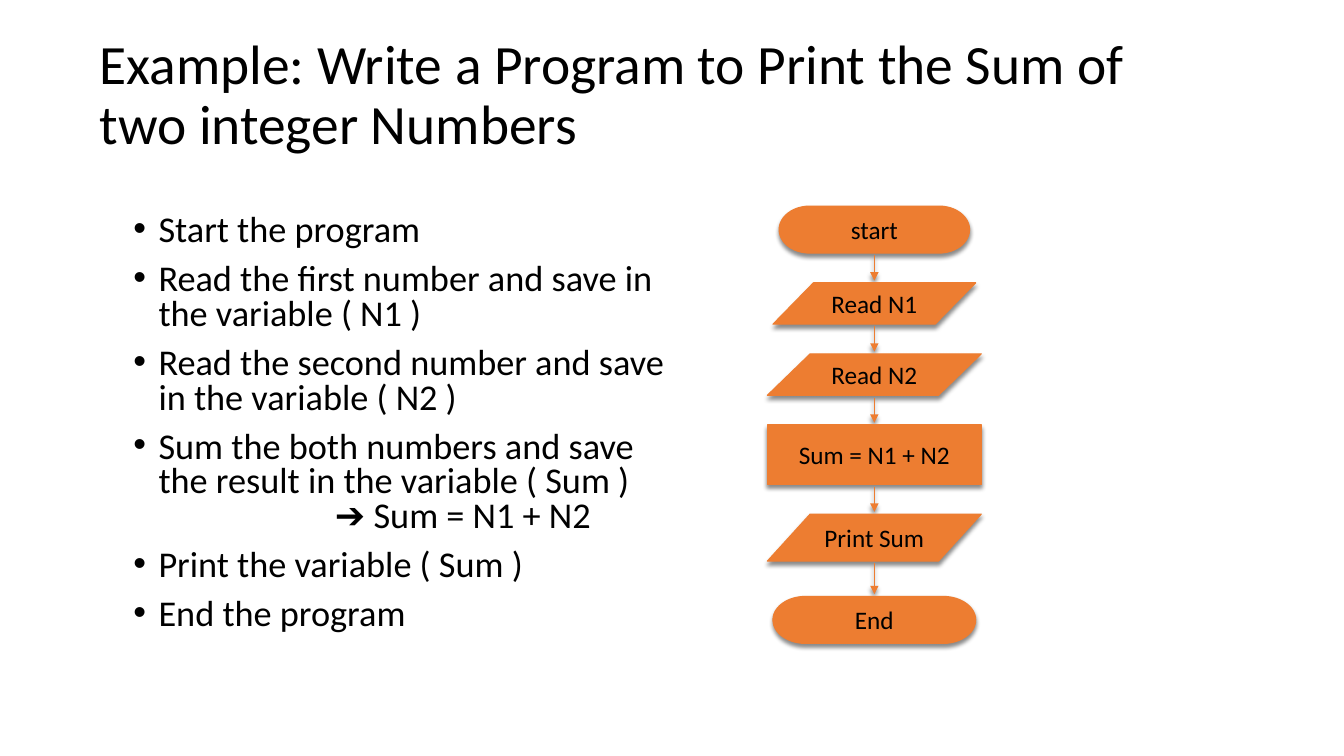
"""Build a slide that pairs the steps of a small program with its flowchart."""
from lxml.etree import SubElement
from pptx import Presentation
from pptx.dml.color import RGBColor
from pptx.enum.shapes import MSO_CONNECTOR as Link, MSO_SHAPE as Shape
from pptx.enum.text import MSO_ANCHOR as Anchor, MSO_AUTO_SIZE as Fit, PP_ALIGN as Align
from pptx.oxml.ns import qn
from pptx.util import Inches, Pt

COLORS = {"text": "000000", "flow": "ED7D31", "shadow": "000000"}
CELL = 1 / 9
CENTER = 78.05
FLOW_TOP = 18.4
ARROW_INSET = 0.2

TITLE = "Example: Write a Program to Print the Sum of two integer Numbers"
ALGORITHM = [
    "Start the program",
    "Read the first number and save in the variable ( N1 )",
    "Read the second number and save in the variable ( N2 )",
    "Sum the both numbers and save the result in the variable ( Sum )\v\t➔ Sum = N1 + N2",
    "Print the variable ( Sum )",
    "End the program",
]
FLOW = [
    (Shape.FLOWCHART_TERMINATOR, "start", 17, 4.2, 2.65),
    (Shape.FLOWCHART_DATA, "Read N1", 18.1, 3.7, 2.65),
    (Shape.FLOWCHART_DATA, "Read N2", 19.1, 3.7, 2.65),
    (Shape.FLOWCHART_PROCESS, "Sum = N1 + N2", 19.1, 5.3, 2.65),
    (Shape.FLOWCHART_DATA, "Print Sum", 19.1, 4.2, 3.15),
    (Shape.FLOWCHART_TERMINATOR, "End", 18.1, 4.2, 0),
]


def cells(count):
    """Turn a number of grid cells into a length."""
    return Inches(count * CELL)


def apply(target, formats):
    """Set every attribute in a dict of format values."""
    for key, value in formats.items():
        setattr(target, key, value)


def place(item, left, top, width, height):
    """Put an item on the grid."""
    apply(item, {"left": cells(left), "top": cells(top),
                 "width": cells(width), "height": cells(height)})


def write(paragraph, words, size, formats):
    """Fill a paragraph with styled words."""
    paragraph.text = words
    apply(paragraph, formats)
    for run in paragraph.runs:
        apply(run.font, {"name": "Calibri", "size": Pt(size)})
        run.font.color.rgb = RGBColor.from_string(COLORS["text"])
    for line_break in paragraph._p.findall(qn("a:br")):
        SubElement(line_break, qn("a:rPr"), sz=str(round(size * 100)))


def add_bullet(paragraph):
    """Give a paragraph a hanging bullet and one tab stop."""
    props = paragraph._p.get_or_add_pPr()
    props.set("marL", str(Inches(0.25)))
    props.set("indent", str(Inches(-0.25)))
    SubElement(props, qn("a:buFont"), typeface="Arial")
    SubElement(props, qn("a:buChar"), char="•")
    stops = SubElement(props, qn("a:tabLst"))
    SubElement(stops, qn("a:tab"), pos=str(Inches(2)), algn="l")


def add_shadow(item):
    """Drop a soft shadow straight below an item."""
    effects = SubElement(item._element.spPr, qn("a:effectLst"))
    shadow = SubElement(effects, qn("a:outerShdw"), blurRad=str(Pt(3)),
                        dist=str(Pt(2.4)), dir="5400000", rotWithShape="0")
    color = SubElement(shadow, qn("a:srgbClr"), val=COLORS["shadow"])
    SubElement(color, qn("a:alpha"), val="45000")


def draw_outline(item):
    """Draw the thin flowchart line."""
    item.line.color.rgb = RGBColor.from_string(COLORS["flow"])
    item.line.width = Pt(0.79)


def add_step(slide, kind, words, top, width, height):
    """Draw one flowchart step on the centre line."""
    step = slide.shapes.add_shape(kind, 0, 0, 0, 0)
    place(step, CENTER - width / 2, top, width, height)
    step.fill.solid()
    step.fill.fore_color.rgb = RGBColor.from_string(COLORS["flow"])
    draw_outline(step)
    add_shadow(step)
    apply(step.text_frame, {"word_wrap": False, "vertical_anchor": Anchor.MIDDLE})
    write(step.text_frame.paragraphs[0], words, 18, {"alignment": Align.CENTER})


def add_arrow(slide, start, end):
    """Draw an arrow down the centre line."""
    arrow = slide.shapes.add_connector(Link.STRAIGHT, cells(CENTER), cells(start),
                                       cells(CENTER), cells(end))
    draw_outline(arrow)
    SubElement(arrow._element.spPr.find(qn("a:ln")), qn("a:tailEnd"), type="triangle")
    add_shadow(arrow)


def add_flowchart(slide):
    """Stack the steps and join them with arrows."""
    top = FLOW_TOP
    for kind, words, width, height, gap in FLOW:
        add_step(slide, kind, words, top, width, height)
        bottom = top + height
        top = bottom + gap
        if gap:
            add_arrow(slide, bottom + ARROW_INSET, top - ARROW_INSET)


def add_title(slide):
    """Fill the title placeholder."""
    title = slide.shapes.title
    place(title, 8, 3, 102, 11.25)
    apply(title.text_frame, {"auto_size": Fit.NONE, "vertical_anchor": Anchor.MIDDLE})
    write(title.text_frame.paragraphs[0], TITLE, 39.6,
          {"alignment": Align.LEFT, "line_spacing": 0.9})


def add_algorithm(slide):
    """Fill the body placeholder with the list of steps."""
    body = slide.placeholders[1]
    place(body, 11, 18.75, 50, 40.5)
    frame = body.text_frame
    apply(frame, {"auto_size": Fit.NONE, "vertical_anchor": Anchor.TOP})
    for index, words in enumerate(ALGORITHM):
        paragraph = frame.add_paragraph() if index else frame.paragraphs[0]
        write(paragraph, words, 25.9, {"line_spacing": 0.8, "space_before": Pt(10)})
        add_bullet(paragraph)


def main():
    """Build and save the slide."""
    deck = Presentation()
    apply(deck, {"slide_width": Inches(13.33), "slide_height": Inches(7.5)})
    slide = deck.slides.add_slide(deck.slide_layouts[1])
    add_title(slide)
    add_algorithm(slide)
    add_flowchart(slide)
    deck.save("out.pptx")


if __name__ == "__main__":
    main()
